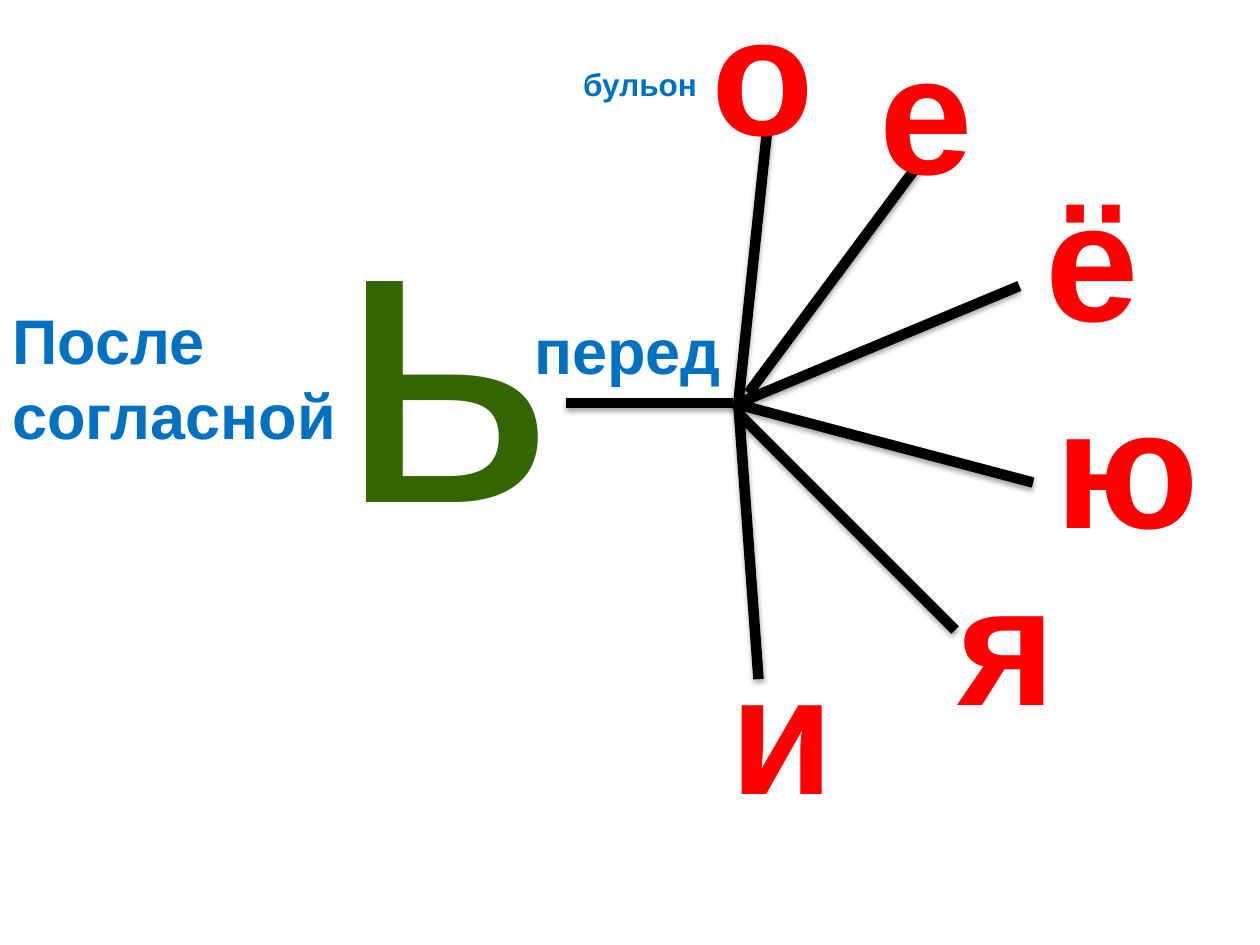
from lxml import etree
from pptx import Presentation
from pptx.dml.color import RGBColor
from pptx.enum.shapes import MSO_CONNECTOR
from pptx.enum.text import MSO_AUTO_SIZE
from pptx.oxml.ns import qn
from pptx.util import Inches, Pt

COLORS = {"ray": "000000", "vowel": "FF0000", "rule": "0070C0", "sign": "336600"}

prs = Presentation()
prs.slide_width, prs.slide_height = Inches(10), Inches(7.5)
slide = prs.slides.add_slide(prs.slide_layouts[6])


def add_ray(x1, y1, x2, y2):
    """Draw a thick line with a soft shadow straight below it."""
    ray = slide.shapes.add_connector(
        MSO_CONNECTOR.STRAIGHT, Inches(x1), Inches(y1), Inches(x2), Inches(y2))
    ray.line.width = Pt(6)
    ray.line.color.rgb = RGBColor.from_string(COLORS["ray"])
    effects = etree.SubElement(ray._element.spPr, qn("a:effectLst"))
    shadow = etree.SubElement(
        effects, qn("a:outerShdw"), blurRad=str(Pt(3.1)), dist=str(Pt(1.8)),
        dir="5400000", rotWithShape="0")
    shade = etree.SubElement(shadow, qn("a:srgbClr"), val=COLORS["ray"])
    etree.SubElement(shade, qn("a:alpha"), val="35000")


def add_label(text, left, top, width, height, size, color, bold=True, wrap=False):
    label = slide.shapes.add_textbox(
        Inches(left), Inches(top), Inches(width), Inches(height))
    frame = label.text_frame
    frame.word_wrap = wrap
    frame.auto_size = MSO_AUTO_SIZE.SHAPE_TO_FIT_TEXT
    frame.text = text
    for paragraph in frame.paragraphs:
        for run in paragraph.runs:
            run.font.name = "Arial"
            run.font.size = Pt(size)
            run.font.bold = bold
            run.font.color.rgb = RGBColor.from_string(COLORS[color])


# Stem from the soft sign, then one ray to each vowel, clockwise
rays = [
    (4.49, 3.2, 5.82, 3.2),
    (5.86, 3.2, 6.09, 1.02),
    (5.94, 3.12, 7.27, 1.33),
    (5.86, 3.2, 8.09, 2.27),
    (5.82, 3.2, 8.2, 3.83),
    (5.86, 3.28, 7.58, 5),
    (5.86, 3.2, 6.02, 5.39),
]
for ends in rays:
    add_ray(*ends)

vowels = [
    ("о", 5.55, -0.31, 0.95),
    ("е", 6.88, 0, 0.95),
    ("ё", 8.2, 1.17, 1.02),
    ("ю", 8.28, 2.81, 1.25),
    ("я", 7.5, 4.22, 0.99),
    ("и", 5.7, 4.92, 0.99),
]
for letter, left, top, width in vowels:
    add_label(letter, left, top, width, 1.72, 96, "vowel", wrap=True)

add_label("После\nсогласной", 0, 2.34, 2.79, 1.31, 36, "rule")
add_label("перед", 4.14, 2.42, 1.7, 0.71, 36, "rule")
add_label("бульон", 4.53, 0.47, 1.11, 0.4, 18, "rule")
add_label("ь", 2.58, 0.62, 1.95, 4.12, 239, "sign", bold=False)

prs.save("out.pptx")
